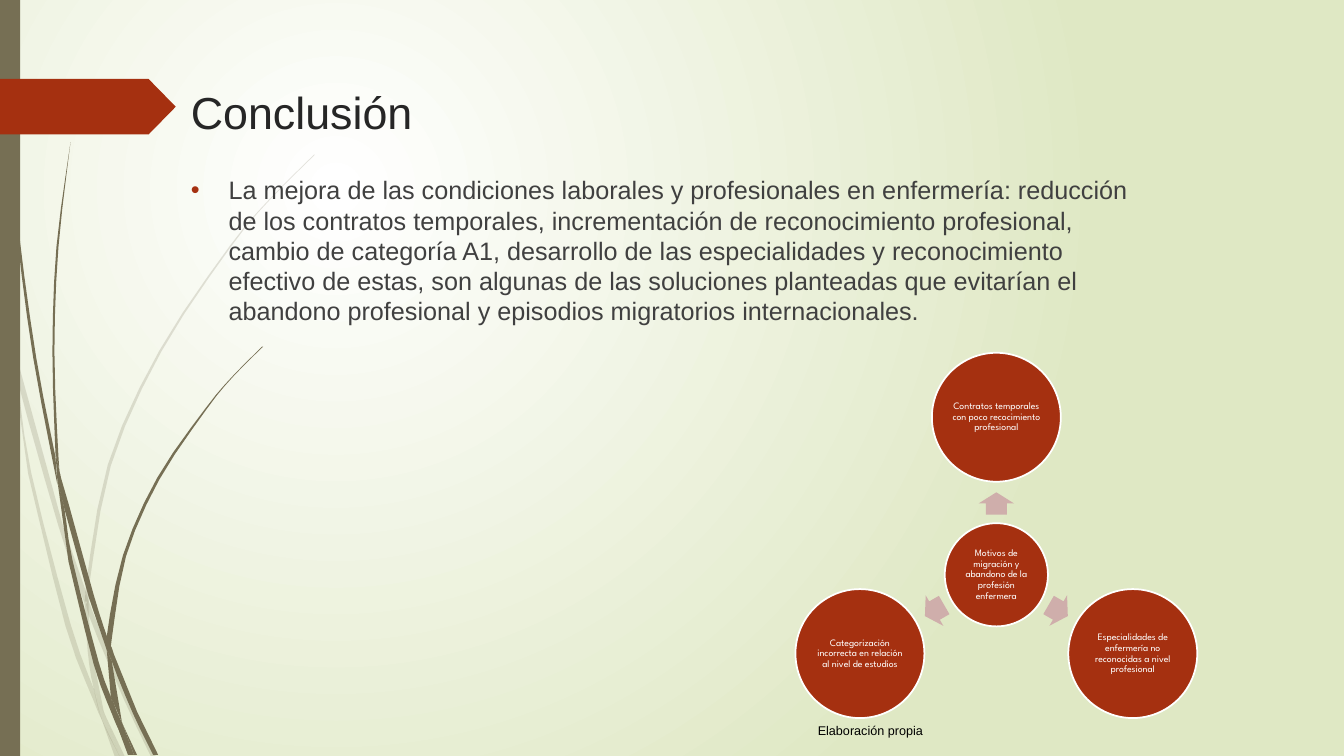
from dataclasses import dataclass
from math import cos, radians, sin

from lxml.etree import SubElement
from pptx import Presentation
from pptx.dml.color import RGBColor
from pptx.enum.shapes import MSO_SHAPE
from pptx.enum.text import MSO_ANCHOR, PP_ALIGN
from pptx.oxml.ns import qn
from pptx.util import Cm, Pt


@dataclass(frozen=True)
class Theme:
    accent: str = "A53010"
    grass: str = "766F54"
    arrow: str = "CFAEAB"
    white: str = "FFFFFF"
    meadow: str = "DFE8C4"
    title: str = "262626"
    body: str = "404040"
    caption: str = "000000"
    font: str = "Arial"
    diagram_font: str = "League Spartan"
    title_size: int = 32
    body_size: int = 18
    caption_size: int = 9
    diagram_size: int = 7
    outline: float = 1.25


@dataclass(frozen=True)
class Box:
    left: float
    top: float
    width: float
    height: float

    def lengths(self):
        return Cm(self.left), Cm(self.top), Cm(self.width), Cm(self.height)


THEME = Theme()
GRASS_UNIT = 2.54
PALE_BLADES = [
    ([(.11, 3.5), (.09, 3.22), (0, 2.82)], [(0, 2.99), (.1, 3.44)]),
    ([(.14, 3.45), (.17, 3.76), (.58, 5.22), (.84, 5.99)], [(.85, 5.86), (.62, 5.2), (.14, 3.45)]),
    ([(.88, 5.96), (.88, 6.1), (1.23, 6.94), (1.5, 7.51)], [(1.55, 7.51), (1.27, 6.92), (.92, 6.07)]),
    ([(1.19, 7.51), (1.24, 7.51)], [(1.05, 7.11)]),
    ([(.93, 6.83), (.7, 6.19), (.31, 4.69), (.17, 3.76), (.11, 3.5)],
     [(.28, 4.7), (.65, 6.21), (.92, 6.93), (1.01, 7.14), (.99, 7.07)]),
    ([(.84, 5.99), (.87, 6.46), (.93, 6.83), (1.05, 7.11)], [(1.03, 7.06), (.91, 6.46), (.88, 6.08)]),
    ([(.88, 5.84), (1.1, 4.62), (1.6, 3.49), (2.29, 2.45), (2.68, 1.98), (3.12, 1.54)],
     [(3.12, 1.53), (2.68, 1.97), (2.28, 2.44), (1.58, 3.48), (1.07, 4.61), (.85, 5.84), (.88, 5.96)]),
    ([(1.01, 7.14), (1.14, 7.51)], [(1.19, 7.51)]),
    ([(.88, 6.08), (.88, 5.96)], [(.85, 5.86), (.84, 5.99)]),
    ([(.96, 6.92), (.93, 6.83), (1.01, 7.14), (1.19, 7.51)], [(1.05, 7.11)]),
]
DARK_BLADES = [
    ([(.07, 1.1), (.17, 2.33), (.33, 3.55), (.57, 4.81)],
     [(.55, 4.53), (.36, 3.55), (.19, 2.32), (.08, 1.09), (.04, 0), (.03, 0), (.04, .48)]),
    ([(.88, 5.92), (1.06, 6.45)], [(1.06, 6.31), (.93, 5.9), (.6, 4.72), (.64, 5.05)]),
    ([(1.13, 6.49), (1.1, 6.41), (1.11, 6.56), (1.32, 7.08), (1.52, 7.49)], [(1.57, 7.49), (1.36, 7.06)]),
    ([(1.1, 6.91), (.98, 6.57), (.72, 5.56), (.64, 5.05), (.57, 4.77)],
     [(.68, 5.57), (.93, 6.59), (1.11, 7.08), (1.17, 7.22), (1.16, 7.17)]),
    ([(.6, 4.72), (.58, 4.53), (.54, 3.49), (.58, 2.45), (.7, 1.41)],
     [(.7, 1.41), (.56, 2.45), (.52, 3.49), (.55, 4.49)]),
    ([(1.33, 7.49), (1.36, 7.49)], [(1.22, 7.19)]),
    ([(.57, 4.77), (.64, 5.05)], [(.6, 4.72), (.55, 4.49)]),
    ([(1.11, 6.33), (1.25, 5.52), (1.58, 4.76), (2.05, 4.06), (2.31, 3.74), (2.61, 3.44)],
     [(2.6, 3.44), (2.31, 3.73), (2.04, 4.05), (1.56, 4.74), (1.22, 5.51), (1.06, 6.31), (1.1, 6.41)]),
    ([(1.17, 7.22), (1.27, 7.49)], [(1.31, 7.49)]),
    ([(1.06, 6.45), (1.1, 6.91), (1.22, 7.19)], [(1.21, 7.16), (1.11, 6.56)]),
    ([(1.06, 6.45), (1.11, 6.56)], [(1.1, 6.41), (1.06, 6.31)]),
    ([(1.16, 7.06), (1.1, 6.91), (1.17, 7.22), (1.3, 7.49)], [(1.33, 7.49), (1.22, 7.19)]),
]
MOTIVES = [
    (-90, "Contratos temporales con poco recocimiento profesional"),
    (30, "Especialidades de enfermería no reconocidas a nivel profesional"),
    (150, "Categorización incorrecta en relación al nivel de estudios"),
]


def paint(shape, color, outline=None, opacity=100):
    shape.shadow.inherit = False
    shape.fill.solid()
    shape.fill.fore_color.rgb = RGBColor.from_string(color)
    if opacity < 100:
        color_element = shape.element.spPr.find(f"{qn('a:solidFill')}/{qn('a:srgbClr')}")
        SubElement(color_element, qn("a:alpha"), val=str(opacity * 1000))
    if outline:
        shape.line.color.rgb = RGBColor.from_string(outline)
        shape.line.width = Pt(THEME.outline)
    else:
        shape.line.fill.background()


def add_preset(slide, kind, box, color, outline=None):
    shape = slide.shapes.add_shape(kind, *box.lengths())
    paint(shape, color, outline)
    return shape


def write_text(shape, text, *, size, color, font=THEME.font, align=PP_ALIGN.LEFT,
               anchor=MSO_ANCHOR.TOP, margins=(.25, .13), spacing=1.0, bullet=None, indent=0):
    frame = shape.text_frame
    frame.word_wrap = True
    frame.vertical_anchor = anchor
    frame.margin_left = frame.margin_right = Cm(margins[0])
    frame.margin_top = frame.margin_bottom = Cm(margins[1])
    paragraph = frame.paragraphs[0]
    paragraph.alignment = align
    paragraph.line_spacing = spacing
    run = paragraph.add_run()
    run.text = text
    run.font.name = font
    run.font.size = Pt(size)
    run.font.color.rgb = RGBColor.from_string(color)
    if bullet:
        properties = paragraph._p.get_or_add_pPr()
        properties.set("marL", str(Cm(indent)))
        properties.set("indent", str(-Cm(indent)))
        bullet_color = SubElement(properties, qn("a:buClr"))
        SubElement(bullet_color, qn("a:srgbClr"), val=THEME.accent)
        SubElement(properties, qn("a:buFont"), typeface=font)
        SubElement(properties, qn("a:buChar"), char=bullet)


def add_text(slide, box, text, **style):
    write_text(slide.shapes.add_textbox(*box.lengths()), text, **style)


def smooth(knots, steps=3):
    if len(knots) < 4:
        return knots
    curve = []
    padded = [knots[0], *knots, knots[-1]]
    for a, b, c, d in zip(padded, padded[1:], padded[2:], padded[3:]):
        for step in range(steps):
            t = step / steps
            curve.append(tuple(
                q + t * (r - p + t * (2 * p - 5 * q + 4 * r - s + t * (3 * (q - r) + s - p))) / 2
                for p, q, r, s in zip(a, b, c, d)))
    return [*curve, knots[-1]]


def add_blade(slide, box, edges, opacity):
    outline = [(Cm(box.left + x * GRASS_UNIT), Cm(box.top + y * GRASS_UNIT))
               for edge in edges for x, y in smooth(edge)]
    builder = slide.shapes.build_freeform(*outline[0])
    builder.add_line_segments(outline[1:], close=True)
    paint(builder.convert_to_shape(), THEME.grass, opacity=opacity)


def add_background(slide):
    fill = slide.background.fill
    fill.gradient()
    for stop, color, position in zip(fill.gradient_stops, (THEME.white, THEME.meadow), (0, 1)):
        stop.color.rgb = RGBColor.from_string(color)
        stop.position = position
    gradient = slide.element.find(f".//{qn('a:gradFill')}")
    gradient.remove(gradient.find(qn("a:lin")))
    circle = SubElement(gradient, qn("a:path"), path="circle")
    SubElement(circle, qn("a:fillToRect"), l="50000", t="50000", r="100000", b="100000")


def add_grass_margin(slide, box):
    for blades, opacity in ((PALE_BLADES, 20), (DARK_BLADES, 100)):
        for edges in blades:
            add_blade(slide, box, edges, opacity)
    add_preset(slide, MSO_SHAPE.RECTANGLE, Box(box.left, box.top, .51, box.height), THEME.grass)
    tag = add_preset(slide, MSO_SHAPE.PENTAGON,
                     Box(box.left, box.top + 1.99, 4.43, 1.4), THEME.accent)
    tag.adjustments[0] = .49


def add_conclusion(slide, box):
    add_text(slide, Box(box.left, box.top, box.width, 1.6), "Conclusión",
             size=THEME.title_size, color=THEME.title)
    add_text(slide, Box(box.left, box.top + 2.27, box.width, 4.2),
             "La mejora de las condiciones laborales y profesionales en enfermería: "
             "reducción de los contratos temporales, incrementación de reconocimiento "
             "profesional, cambio de categoría A1, desarrollo de las especialidades y "
             "reconocimiento efectivo de estas, son algunas de las soluciones planteadas "
             "que evitarían el abandono profesional y episodios migratorios internacionales.",
             size=THEME.body_size, color=THEME.body, bullet="•", indent=.95)


def centered(x, y, width, height):
    return Box(x - width / 2, y - height / 2, width, height)


def add_motive(slide, x, y, diameter, text):
    circle = add_preset(slide, MSO_SHAPE.OVAL, centered(x, y, diameter, diameter),
                        THEME.accent, THEME.white)
    write_text(circle, text, size=THEME.diagram_size, color=THEME.white,
               font=THEME.diagram_font, align=PP_ALIGN.CENTER,
               anchor=MSO_ANCHOR.MIDDLE, margins=(0, 0), spacing=.9)


def add_motive_diagram(slide, box):
    outer, hub, orbit, arrow_orbit = 3.25, 2.6, 3.97, 1.8
    x, y = box.left + box.width / 2, box.top + outer / 2 + orbit
    add_motive(slide, x, y, hub, "Motivos de migración y abandono de la profesión enfermera")
    for angle, text in MOTIVES:
        across, down = cos(radians(angle)), sin(radians(angle))
        arrow = add_preset(slide, MSO_SHAPE.RIGHT_ARROW,
                           centered(x + arrow_orbit * across, y + arrow_orbit * down, .56, .89),
                           THEME.arrow)
        arrow.adjustments[0] = .6
        arrow.rotation = angle % 360
        add_motive(slide, x + orbit * across, y + orbit * down, outer, text)
    add_text(slide, Box(box.left + .32, box.top + 9.2, 8.48, .64), "Elaboración propia",
             size=THEME.caption_size, color=THEME.caption)


def main():
    presentation = Presentation()
    presentation.slide_width, presentation.slide_height = Cm(33.87), Cm(19.05)
    slide = presentation.slides.add_slide(presentation.slide_layouts[6])
    add_background(slide)
    add_grass_margin(slide, Box(0, 0, 8, 19.05))
    add_conclusion(slide, Box(4.56, 2, 24.77, 6.47))
    add_motive_diagram(slide, Box(20.04, 8.89, 10.14, 9.84))
    presentation.save("out.pptx")


if __name__ == "__main__":
    main()
